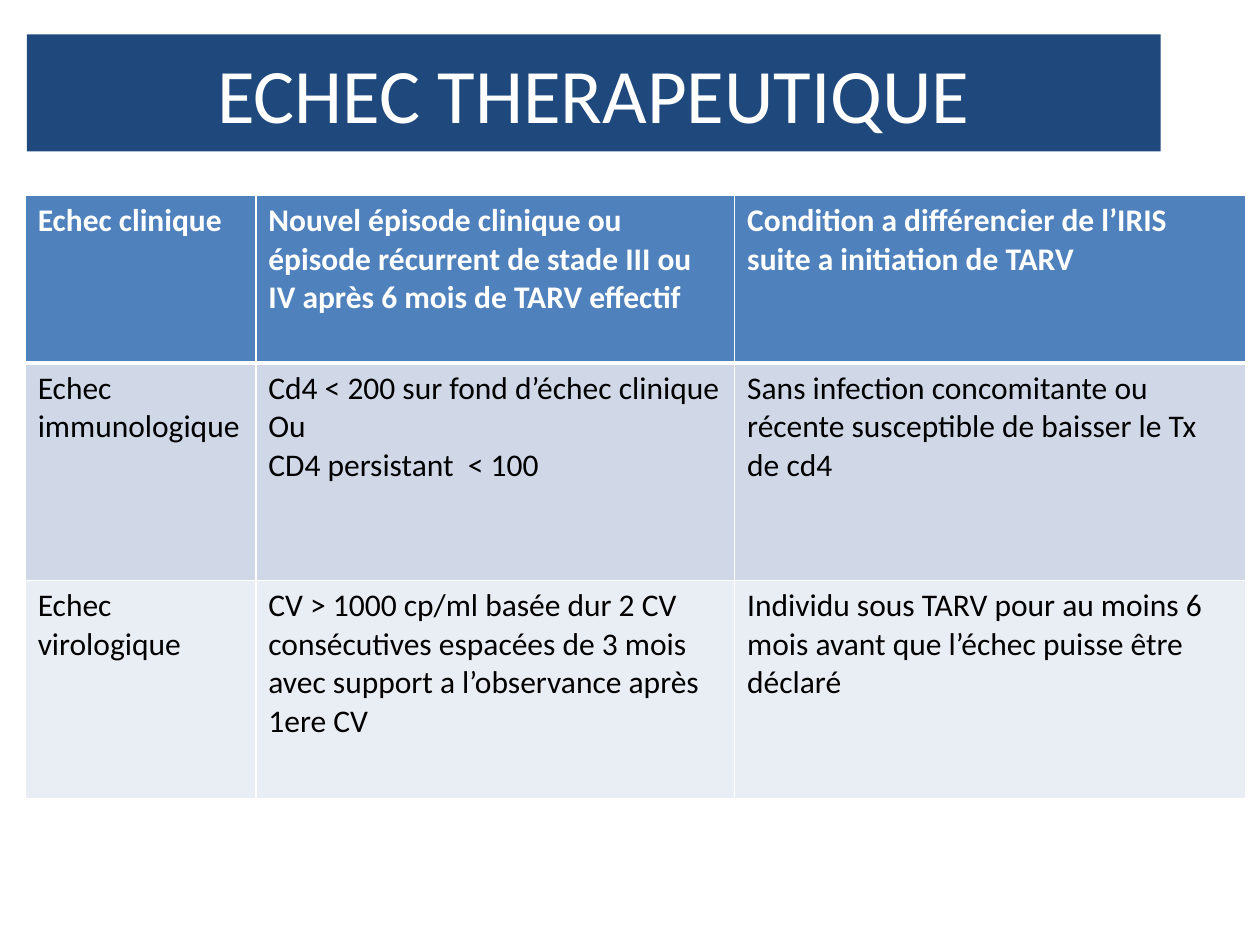
"""Build the slide on the three kinds of treatment failure."""
from lxml import etree
from pptx import Presentation
from pptx import util as u
from pptx.dml.color import RGBColor
from pptx.enum import text
from pptx.oxml import ns

ROWS = [
    ["Echec clinique",
     "Nouvel épisode clinique ou épisode récurrent de stade III ou IV après 6 mois de TARV effectif",
     "Condition a différencier de l’IRIS suite a initiation de TARV"],
    ["Echec immunologique",
     "Cd4 < 200 sur fond d’échec clinique\nOu\nCD4 persistant  < 100",
     "Sans infection concomitante ou récente susceptible de baisser le Tx de cd4"],
    ["Echec virologique",
     "CV > 1000 cp/ml basée dur 2 CV consécutives espacées de 3 mois avec support a l’observance après 1ere CV",
     "Individu sous TARV pour au moins 6 mois avant que l’échec puisse être déclaré"],
]
FILLS = ["4F81BD", "D0D8E8", "E9EDF4"]
WIDTHS = [131.8, 273.6, 292.3]
HEIGHTS = [95.8, 124.4, 124.4]


def add_run(p, words, size, color, bold=False):
    """Add one formatted run to a paragraph."""
    r = p.add_run()
    r.text = words
    r.font.name = "Calibri"
    r.font.size = u.Pt(size)
    r.font.bold = bold
    r.font.color.rgb = RGBColor.from_string(color)


def add_border(cell, side, width):
    """Add a white line on one side of a cell."""
    ln = etree.SubElement(cell._tc.get_or_add_tcPr(), ns.qn(f"a:ln{side}"), w=str(u.Pt(width)))
    fill = etree.SubElement(ln, ns.qn("a:solidFill"))
    etree.SubElement(fill, ns.qn("a:srgbClr"), val="FFFFFF")


prs = Presentation()
prs.slide_width, prs.slide_height = u.Pt(720), u.Pt(540)
s = prs.slides.add_slide(prs.slide_layouts[5])

tbl = s.shapes.add_table(3, 3, u.Pt(14.4), u.Pt(111.6), u.Pt(sum(WIDTHS)), u.Pt(sum(HEIGHTS))).table
for col, width in zip(tbl.columns, WIDTHS):
    col.width = u.Pt(width)
for i, (row, height) in enumerate(zip(tbl.rows, HEIGHTS)):
    row.height = u.Pt(height)
    for cell, words in zip(row.cells, ROWS[i]):
        for side in "LRTB":
            heavy = (i, side) in [(0, "B"), (1, "T")]
            add_border(cell, side, 3 if heavy else 1)
        cell.fill.solid()
        cell.fill.fore_color.rgb = RGBColor.from_string(FILLS[i])
        tf = cell.text_frame
        for n, line in enumerate(words.split("\n")):
            p = tf.add_paragraph() if n else tf.paragraphs[0]
            add_run(p, line, 18, "000000" if i else "FFFFFF", bold=i == 0)

sp = s.shapes.title
sp.left, sp.top, sp.width, sp.height = u.Pt(15.3), u.Pt(19.6), u.Pt(648), u.Pt(67)
sp.fill.solid()
sp.fill.fore_color.rgb = RGBColor.from_string("1F497D")
tf = sp.text_frame
tf.vertical_anchor = text.MSO_ANCHOR.MIDDLE
p = tf.paragraphs[0]
p.alignment = text.PP_ALIGN.CENTER
add_run(p, "ECHEC THERAPEUTIQUE", 44, "FFFFFF")

prs.save("out.pptx")
